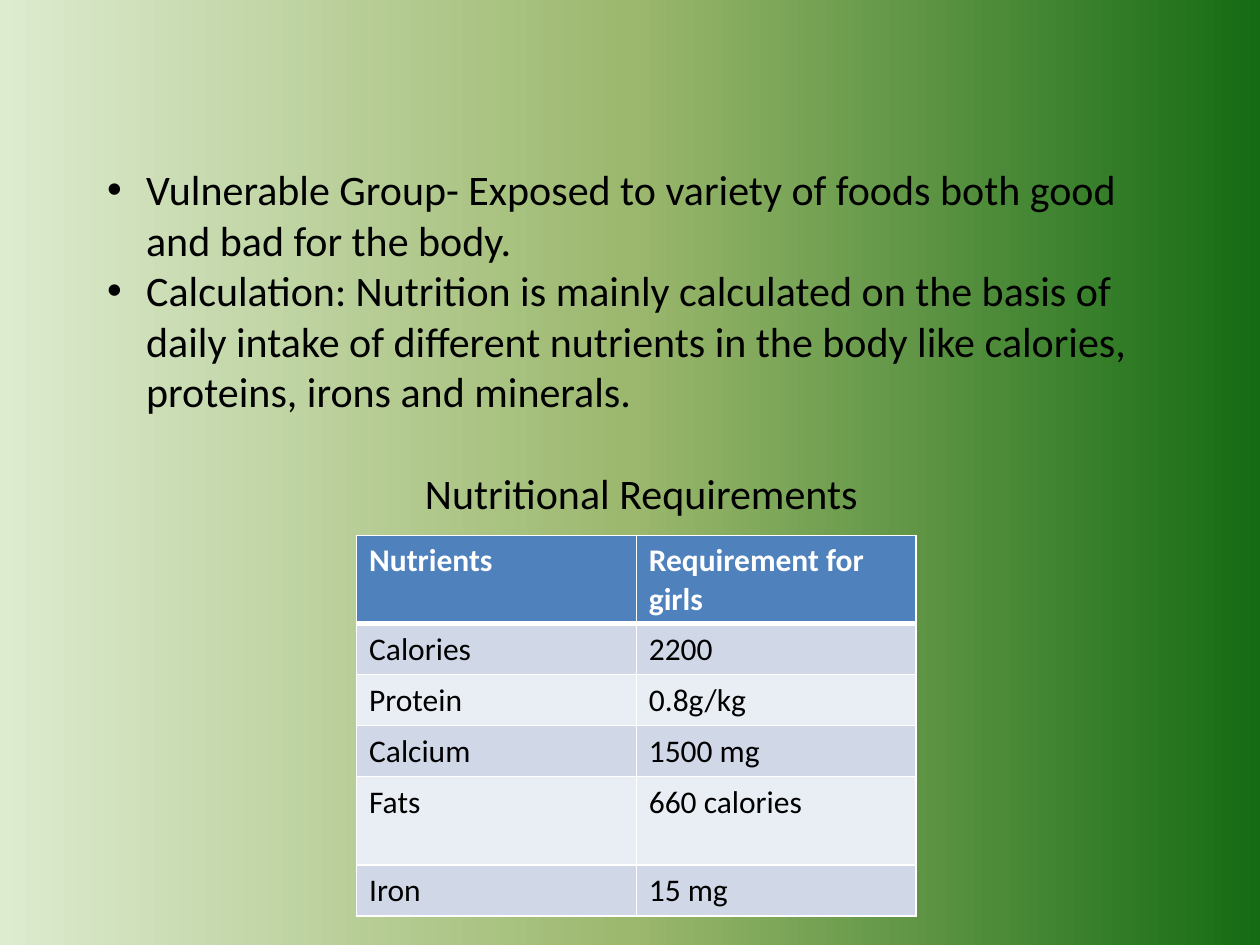
from dataclasses import dataclass
from typing import Optional

from lxml import etree
from pptx import Presentation
from pptx import util as u
from pptx.dml import color as dml
from pptx.enum import text as t
from pptx.oxml import ns

COLORS = {
    "black": "000000",
    "white": "FFFFFF",
    "header": "4F81BD",
    "odd_row": "D0D8E8",
    "even_row": "E9EDF4",
}
GRADIENT = {0: "DDEBCF", 50: "9CB86E", 100: "156B13"}
FONT = "Calibri"
COLUMNS, ROWS = 40, 30
SLIDE_WIDTH, SLIDE_HEIGHT = u.Inches(10), u.Inches(7.5)
BODY_SIZE, CELL_SIZE = 24, 18
BULLET_INDENT = u.Inches(0.31)


@dataclass
class Area:
    column: float
    row: float
    width: float
    height: float

    def lengths(self) -> tuple[int, int, int, int]:
        return (across(self.column), down(self.row), across(self.width), down(self.height))


@dataclass
class Nutrient:
    name: str
    requirement: str
    height: float = 1.62
    fill: Optional[str] = None


LIST_AREA = Area(3, 5, 34.72, 11.72)
TABLE_AREA = Area(11.32, 17, 17.76, 12.08)
BULLETS = [
    "Vulnerable Group- Exposed to variety of foods both good and bad for the body.",
    "Calculation: Nutrition is mainly calculated on the basis of daily intake of "
    "different nutrients in the body like calories, proteins, irons and minerals.",
]
NUTRIENTS = [
    Nutrient("Nutrients", "Requirement for girls", 2.8, "header"),
    Nutrient("Calories", "2200"),
    Nutrient("Protein", "0.8g/kg"),
    Nutrient("Calcium", "1500 mg"),
    Nutrient("Fats", "660 calories", 2.8),
    Nutrient("Iron", "15 mg"),
]


def across(columns: float) -> int:
    return round(SLIDE_WIDTH * columns / COLUMNS)


def down(rows: float) -> int:
    return round(SLIDE_HEIGHT * rows / ROWS)


def add_child(parent, tag: str, **attributes: str):
    return etree.SubElement(parent, ns.qn(tag), **attributes)


def write_text(paragraph, content: str, *, size: float, color: str = "black",
               bold: bool = False, align=t.PP_ALIGN.LEFT, before: float = 0) -> None:
    run = paragraph.add_run()
    run.text = content
    run.font.name = FONT
    run.font.size = u.Pt(size)
    run.font.bold = bold
    run.font.color.rgb = dml.RGBColor.from_string(COLORS[color])
    paragraph.alignment = align
    paragraph.space_before = u.Pt(before)


def set_bullet(paragraph, character: str, indent: int) -> None:
    properties = paragraph._p.get_or_add_pPr()
    properties.set("marL", str(indent))
    properties.set("indent", str(-indent))
    if character:
        add_child(properties, "a:buChar", char=character)
    else:
        add_child(properties, "a:buNone")


def paint_background(slide) -> None:
    fill = slide.background.fill
    fill.gradient()
    fill.gradient_angle = 0
    stops = slide.background._cSld.find(".//" + ns.qn("a:gsLst"))
    for stop in list(stops):
        stops.remove(stop)
    for percent, color in GRADIENT.items():
        stop = add_child(stops, "a:gs", pos=str(percent * 1000))
        add_child(stop, "a:srgbClr", val=color)


def draw_list(shape) -> None:
    shape.left, shape.top, shape.width, shape.height = LIST_AREA.lengths()
    frame = shape.text_frame
    frame.word_wrap = True
    frame.auto_size = t.MSO_AUTO_SIZE.SHAPE_TO_FIT_TEXT
    paragraph = frame.paragraphs[0]
    for content in BULLETS:
        write_text(paragraph, content, size=BODY_SIZE)
        set_bullet(paragraph, "•", BULLET_INDENT)
        paragraph = frame.add_paragraph()
    write_text(paragraph, "Nutritional Requirements", size=BODY_SIZE,
               align=t.PP_ALIGN.CENTER, before=29.3)
    set_bullet(paragraph, "", 0)


def draw_cell(cell, content: str, fill: str, is_header: bool) -> None:
    properties = cell._tc.get_or_add_tcPr()
    for side in "LRTB":
        width = 3 if is_header and side == "B" else 1
        line = add_child(properties, f"a:ln{side}", w=str(u.Pt(width)))
        solid = add_child(line, "a:solidFill")
        add_child(solid, "a:srgbClr", val=COLORS["white"])
    cell.fill.solid()
    cell.fill.fore_color.rgb = dml.RGBColor.from_string(COLORS[fill])
    write_text(cell.text_frame.paragraphs[0], content, size=CELL_SIZE,
               color="white" if is_header else "black", bold=is_header)


def draw_table(slide) -> None:
    table = slide.shapes.add_table(len(NUTRIENTS), 2, *TABLE_AREA.lengths()).table
    for index, nutrient in enumerate(NUTRIENTS):
        table.rows[index].height = down(nutrient.height)
        fill = nutrient.fill or ("odd_row" if index % 2 else "even_row")
        for column, content in enumerate((nutrient.name, nutrient.requirement)):
            draw_cell(table.cell(index, column), content, fill, index == 0)


def main() -> None:
    presentation = Presentation()
    presentation.slide_width, presentation.slide_height = SLIDE_WIDTH, SLIDE_HEIGHT
    slide = presentation.slides.add_slide(presentation.slide_layouts[1])
    title = slide.shapes.title._element
    title.getparent().remove(title)
    paint_background(slide)
    draw_list(slide.placeholders[1])
    draw_table(slide)
    presentation.save("out.pptx")


if __name__ == "__main__":
    main()
